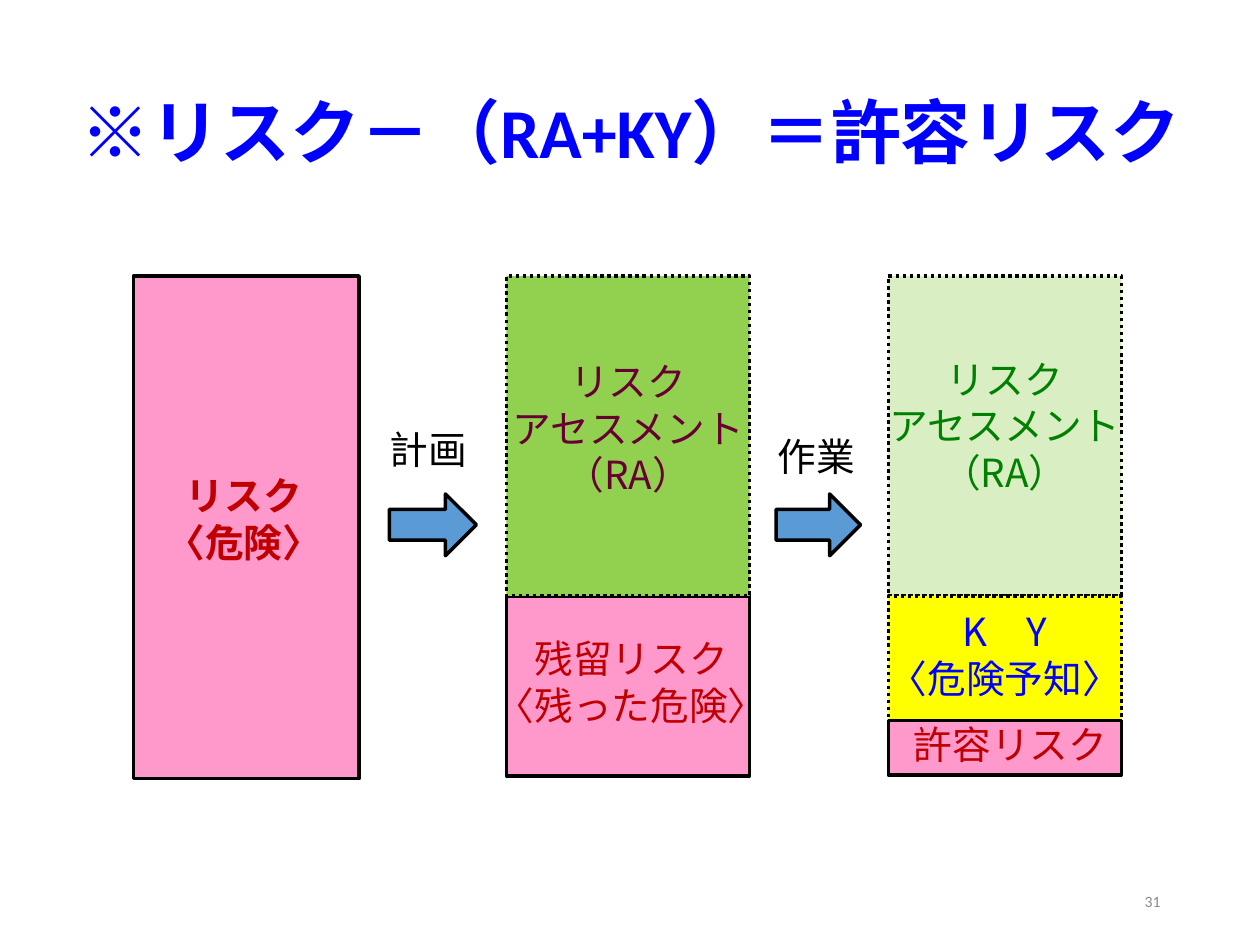
from dataclasses import dataclass

from lxml.etree import SubElement
from pptx import Presentation
from pptx.dml.color import RGBColor
from pptx.enum.dml import MSO_LINE
from pptx.enum.shapes import MSO_SHAPE
from pptx.enum.text import MSO_ANCHOR, PP_ALIGN
from pptx.oxml.ns import qn
from pptx.slide import Slide
from pptx.util import Emu, Pt

EMU_PER_PX = 9144  # 100 px to the inch


@dataclass(frozen=True)
class Theme:
    latin_font: str = "Calibri"
    japanese_font: str = "Noto Sans CJK JP"
    title_size: float = 40
    label_size: float = 22.1
    number_size: float = 9
    line_width: float = 2
    black: str = "000000"
    blue: str = "0000FF"
    red: str = "C00000"
    plum: str = "660033"
    green: str = "008000"
    grey: str = "8C8C8C"
    risk_fill: str = "FF99CC"
    assessment_fill: str = "92D050"
    faded_fill: str = "D9EFC3"
    prediction_fill: str = "FFFF00"
    arrow_fill: str = "5B9BD5"


THEME = Theme()


@dataclass(frozen=True)
class Box:
    left: int
    top: int
    width: int
    height: int

    def emu(self) -> tuple[Emu, ...]:
        return tuple(Emu(px * EMU_PER_PX)
                     for px in (self.left, self.top, self.width, self.height))


@dataclass(frozen=True)
class Block:
    box: Box
    fill: str
    dotted: bool = False
    kind: MSO_SHAPE = MSO_SHAPE.RECTANGLE


@dataclass(frozen=True)
class Label:
    box: Box
    lines: tuple[str, ...]
    color: str
    bold: bool = False
    size: float = THEME.label_size
    font: str = THEME.japanese_font
    align: PP_ALIGN = PP_ALIGN.CENTER
    side_inset: int = 0
    spacing: float = 1.0


def draw_block(slide: Slide, block: Block) -> None:
    shape = slide.shapes.add_shape(block.kind, *block.box.emu())
    shape.shadow.inherit = False
    shape.fill.solid()
    shape.fill.fore_color.rgb = RGBColor.from_string(block.fill)
    shape.line.color.rgb = RGBColor.from_string(THEME.black)
    shape.line.width = Pt(THEME.line_width)
    if block.dotted:
        shape.line.dash_style = MSO_LINE.ROUND_DOT


def draw_label(slide: Slide, label: Label) -> None:
    frame = slide.shapes.add_textbox(*label.box.emu()).text_frame
    frame.word_wrap = True
    frame.vertical_anchor = MSO_ANCHOR.MIDDLE
    frame.margin_left = frame.margin_right = Emu(label.side_inset * EMU_PER_PX)
    for index, line in enumerate(label.lines):
        paragraph = frame.add_paragraph() if index else frame.paragraphs[0]
        paragraph.alignment = label.align
        paragraph.line_spacing = label.spacing
        run = paragraph.add_run()
        run.text = line
        run.font.size = Pt(label.size)
        run.font.bold = label.bold
        run.font.color.rgb = RGBColor.from_string(label.color)
        run.font.name = label.font
        east_asian = SubElement(run.font._element, qn("a:ea"))
        east_asian.set("typeface", THEME.japanese_font)


TOP, SPLIT = 219, 473
ASSESSMENT_HEIGHT = SPLIT - TOP
PLAN_LEFT, PLAN_WIDTH = 402, 193
WORK_LEFT, WORK_WIDTH = 705, 185
ARROW_TOP, ARROW_HEIGHT = 392, 49
ASSESSMENT_LINES = ("リスク", "アセスメント", "（RA）")

BLOCKS = (
    Block(Box(106, TOP, 179, 399), THEME.risk_fill),
    Block(Box(PLAN_LEFT, SPLIT, PLAN_WIDTH, 143), THEME.risk_fill),
    Block(Box(PLAN_LEFT, TOP, PLAN_WIDTH, ASSESSMENT_HEIGHT),
          THEME.assessment_fill, dotted=True),
    Block(Box(WORK_LEFT, TOP, WORK_WIDTH, ASSESSMENT_HEIGHT),
          THEME.faded_fill, dotted=True),
    Block(Box(WORK_LEFT, SPLIT, WORK_WIDTH, 99), THEME.prediction_fill, dotted=True),
    Block(Box(WORK_LEFT, SPLIT + 99, WORK_WIDTH, 43), THEME.risk_fill),
    Block(Box(309, ARROW_TOP, 69, ARROW_HEIGHT), THEME.arrow_fill,
          kind=MSO_SHAPE.RIGHT_ARROW),
    Block(Box(616, ARROW_TOP, 67, ARROW_HEIGHT), THEME.arrow_fill,
          kind=MSO_SHAPE.RIGHT_ARROW),
)

LABELS = (
    Label(Box(20, 45, 961, 125), ("※リスク－（RA+KY）＝許容リスク",), THEME.blue,
          bold=True, size=THEME.title_size, font=THEME.latin_font,
          side_inset=10, spacing=0.9),
    Label(Box(126, 343, 135, 137), ("リスク", "〈危険〉"), THEME.red, bold=True),
    Label(Box(401, 271, 195, 137), ASSESSMENT_LINES, THEME.plum),
    Label(Box(386, 486, 230, 110), ("残留リスク", "〈残った危険〉"), THEME.red),
    Label(Box(700, 269, 195, 137), ASSESSMENT_LINES, THEME.green),
    Label(Box(700, 489, 195, 61), ("K　Y", "〈危険予知〉"), THEME.blue),
    Label(Box(717, 574, 170, 33), ("許容リスク",), THEME.red),
    Label(Box(294, 327, 92, 59), ("計画",), THEME.black),
    Label(Box(602, 332, 92, 59), ("作業",), THEME.black),
    Label(Box(706, 695, 225, 40), ("31",), THEME.grey, size=THEME.number_size,
          font=THEME.latin_font, align=PP_ALIGN.RIGHT, side_inset=10),
)


def main() -> None:
    presentation = Presentation()
    presentation.slide_width = Emu(1000 * EMU_PER_PX)
    presentation.slide_height = Emu(750 * EMU_PER_PX)
    slide = presentation.slides.add_slide(presentation.slide_layouts[6])
    for block in BLOCKS:
        draw_block(slide, block)
    for label in LABELS:
        draw_label(slide, label)
    presentation.save("out.pptx")


if __name__ == "__main__":
    main()
